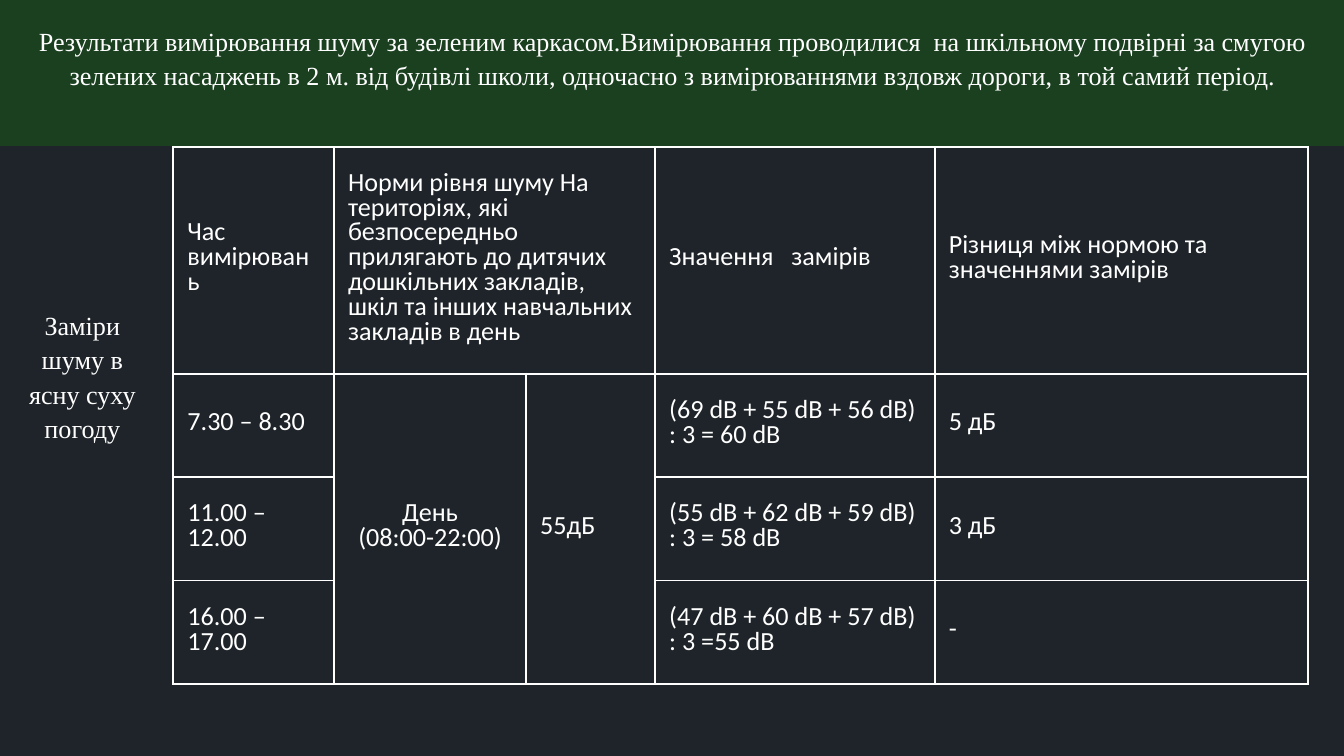
from lxml import etree
from pptx import Presentation
from pptx.dml.color import RGBColor
from pptx.enum.shapes import MSO_SHAPE
from pptx.enum.text import MSO_ANCHOR, PP_ALIGN
from pptx.oxml.ns import qn
from pptx.util import Inches, Pt

RECTANGLE = MSO_SHAPE.RECTANGLE
MIDDLE = MSO_ANCHOR.MIDDLE
LEFT, CENTER = PP_ALIGN.LEFT, PP_ALIGN.CENTER

COLORS = {"body": "1E2429", "header": "1A401F", "white": "FFFFFF"}
SLIDE_WIDTH, SLIDE_HEIGHT = 20, 11.25
HEADER_HEIGHT = 2.17
COLUMN_WIDTHS = [2.39, 2.86, 1.92, 4.16, 5.56]
ROW_HEIGHTS = [3.37, 1.54, 1.54, 1.54]
CELL_MARGIN = 0.21
BORDER_WIDTH = 2.25
BORDER_TAGS = ["a:lnL", "a:lnR", "a:lnT", "a:lnB"]

TITLE = (
    "Результати вимірювання шуму за зеленим каркасом.Вимірювання проводилися  "
    "на шкільному подвірні за смугою зелених насаджень в 2 м. від будівлі школи, "
    "одночасно з вимірюваннями вздовж дороги, в той самий період."
)
SIDE_LABEL = "Заміри шуму в ясну суху погоду"
NORM = (
    "Норми рівня шуму На територіях, які безпосередньо прилягають до дитячих "
    "дошкільних закладів, шкіл та інших навчальних закладів в день"
)
ROWS = [
    ["Час вимірювань", NORM, None, "Значення   замірів",
     "Різниця між нормою та значеннями замірів"],
    ["7.30 – 8.30", "День\n(08:00-22:00)", "55дБ",
     "(69 dB + 55 dB + 56 dB) : 3 = 60 dB", "5 дБ"],
    ["11.00 – 12.00", None, None, "(55 dB + 62 dB + 59 dB) : 3 = 58 dB", "3 дБ"],
    ["16.00 – 17.00", None, None, "(47 dB + 60 dB + 57 dB) : 3 =55 dB", "-"],
]
MERGES = [((0, 1), (0, 2)), ((1, 1), (3, 1)), ((1, 2), (3, 2))]

CELL_FORMAT = {"name": "Calibri", "size": Pt(28)}
LABEL_FORMAT = {"name": "Times New Roman", "size": Pt(28)}


def write_text(text_frame, text, font_format, spacing, alignment):
    text_frame.word_wrap = True
    text_frame.text = text
    for paragraph in text_frame.paragraphs:
        paragraph.alignment = alignment
        paragraph.line_spacing = Pt(spacing)
        for run in paragraph.runs:
            for name, value in font_format.items():
                setattr(run.font, name, value)
            run.font.color.rgb = RGBColor.from_string(COLORS["white"])


def set_margins(target, margin):
    for side in ("left", "right", "top", "bottom"):
        setattr(target, f"margin_{side}", Inches(margin))


def add_band(slide, box, color):
    shape = slide.shapes.add_shape(RECTANGLE, *map(Inches, box))
    shape.shadow.inherit = False
    shape.fill.solid()
    shape.fill.fore_color.rgb = RGBColor.from_string(COLORS[color])
    shape.line.fill.background()


def add_label(slide, box, text):
    text_frame = slide.shapes.add_textbox(*map(Inches, box)).text_frame
    set_margins(text_frame, 0)
    write_text(text_frame, text, LABEL_FORMAT, 37, CENTER)


def add_borders(cell):
    properties = cell._tc.get_or_add_tcPr()
    for index, tag in enumerate(BORDER_TAGS):
        line = etree.Element(qn(tag), w=str(Pt(BORDER_WIDTH)))
        fill = etree.SubElement(line, qn("a:solidFill"))
        etree.SubElement(fill, qn("a:srgbClr"), val=COLORS["white"])
        properties.insert(index, line)


def add_noise_table(slide, box):
    table = slide.shapes.add_table(
        len(ROW_HEIGHTS), len(COLUMN_WIDTHS), *map(Inches, box)
    ).table
    table.first_row = False
    table.horz_banding = False
    for column, width in zip(table.columns, COLUMN_WIDTHS):
        column.width = Inches(width)
    for row, height in zip(table.rows, ROW_HEIGHTS):
        row.height = Inches(height)
    for row_index, texts in enumerate(ROWS):
        for column_index, text in enumerate(texts):
            cell = table.cell(row_index, column_index)
            cell.fill.background()
            cell.vertical_anchor = MIDDLE
            set_margins(cell, CELL_MARGIN)
            add_borders(cell)
            if text:
                alignment = CENTER if "\n" in text else LEFT
                write_text(cell.text_frame, text, CELL_FORMAT, 26.6, alignment)
    for first, last in MERGES:
        table.cell(*first).merge(table.cell(*last))


def main():
    presentation = Presentation()
    presentation.slide_width = Inches(SLIDE_WIDTH)
    presentation.slide_height = Inches(SLIDE_HEIGHT)
    slide = presentation.slides.add_slide(presentation.slide_layouts[6])
    body_height = SLIDE_HEIGHT - HEADER_HEIGHT
    add_band(slide, (0, HEADER_HEIGHT, SLIDE_WIDTH, body_height), "body")
    add_band(slide, (0, 0, SLIDE_WIDTH, HEADER_HEIGHT), "header")
    add_noise_table(slide, (2.58, 2.19, sum(COLUMN_WIDTHS), sum(ROW_HEIGHTS)))
    add_label(slide, (0.33, 4.55, 1.79, 2.04), SIDE_LABEL)
    add_label(slide, (0.52, 0.33, 18.96, 1), TITLE)
    presentation.save("out.pptx")


if __name__ == "__main__":
    main()
